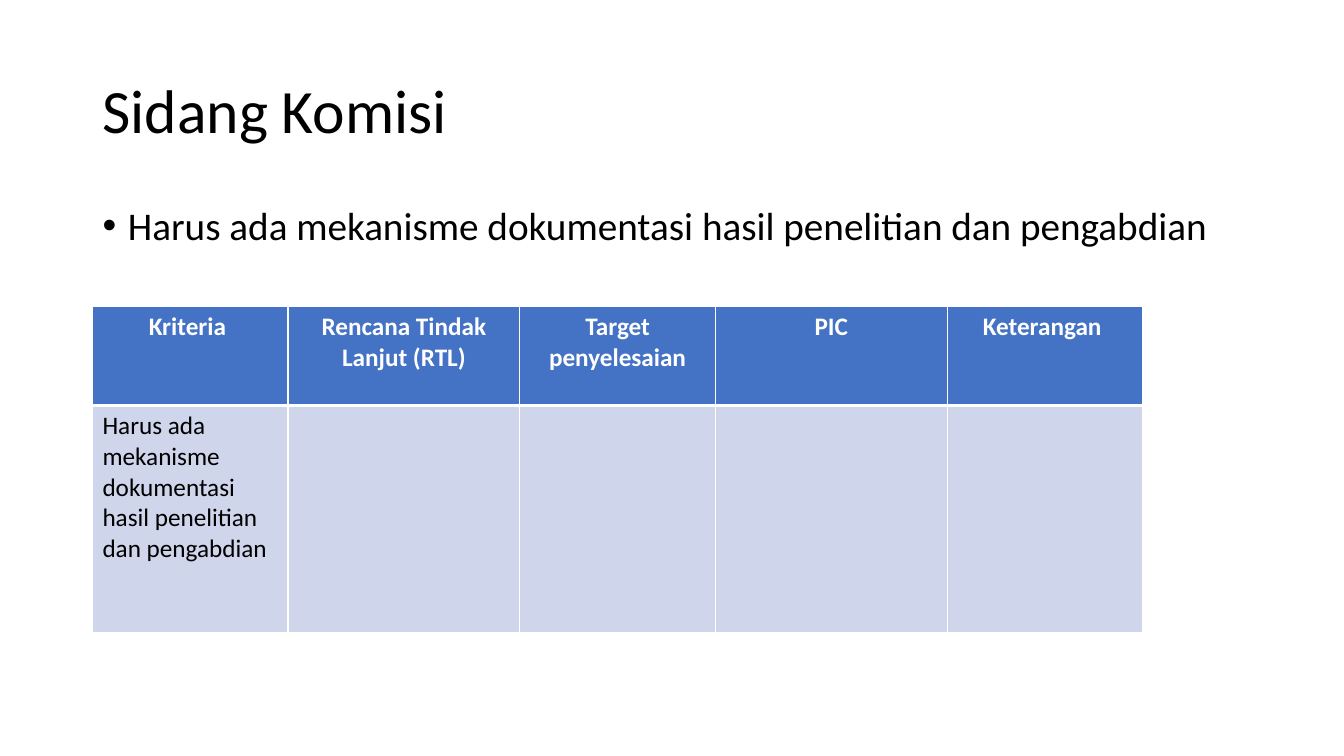
import pptx
import pptx.dml.color
import pptx.enum.text
import pptx.oxml
import pptx.oxml.ns
import pptx.util
from pptx.util import Cm

FONT = "Calibri"
BLACK, WHITE, BLUE, PALE = "000000", "FFFFFF", "4472C4", "CFD5EA"
LEFT, WIDTH = 2.33, 29.21
CRITERION = "Harus ada mekanisme dokumentasi hasil penelitian dan pengabdian"
HEADERS = ["Kriteria ", "Rencana Tindak Lanjut (RTL)", "Target penyelesaian",
           "PIC", "Keterangan "]
NARROW, WIDE = 4.93, 5.84
COLUMN_WIDTHS = [NARROW, WIDE, NARROW, WIDE, NARROW]
ROW_HEIGHTS = [2.49, 5.72]
ALIGN = pptx.enum.text.PP_ALIGN
ANCHOR = pptx.enum.text.MSO_ANCHOR


def rgb(value):
    """Return the colour for a hex string."""
    return pptx.dml.color.RGBColor.from_string(value)


def add_run(p, text, size, color, bold=False):
    """Add one formatted run to a paragraph."""
    r = p.add_run()
    r.text = text
    r.font.name = FONT
    r.font.size = pptx.util.Pt(size)
    r.font.bold = bold
    r.font.color.rgb = rgb(color)


def fill_placeholder(sp, top, height, text, size, anchor):
    """Place a placeholder, write its text and return the paragraph."""
    sp.left, sp.top, sp.width, sp.height = Cm(LEFT), Cm(top), Cm(WIDTH), Cm(height)
    tf = sp.text_frame
    tf.word_wrap = True
    tf.auto_size = pptx.enum.text.MSO_AUTO_SIZE.NONE
    tf.vertical_anchor = anchor
    p = tf.paragraphs[0]
    p.alignment = ALIGN.LEFT
    p.line_spacing = 0.9
    add_run(p, text, size, BLACK)
    return p


def set_bullet(p, indent):
    """Give a paragraph a round bullet with a hanging indent."""
    pPr = p._p.get_or_add_pPr()
    pPr.set("marL", str(indent))
    pPr.set("indent", str(-indent))
    ns = pptx.oxml.ns.nsdecls("a")
    pPr.append(pptx.oxml.parse_xml(f'<a:buFont {ns} typeface="Arial"/>'))
    pPr.append(pptx.oxml.parse_xml(f'<a:buChar {ns} char="•"/>'))


def set_borders(cell, top, bottom):
    """Draw white cell borders, 1 pt at the sides."""
    tcPr = cell._tc.get_or_add_tcPr()
    ns = pptx.oxml.ns.nsdecls("a")
    for side, width in (("L", 1), ("R", 1), ("T", top), ("B", bottom)):
        tcPr.append(pptx.oxml.parse_xml(
            f'<a:ln{side} {ns} w="{pptx.util.Pt(width)}"><a:solidFill>'
            f'<a:srgbClr val="{WHITE}"/></a:solidFill></a:ln{side}>'))


def add_plan_table(slide, top):
    """Add the follow-up table with a header row and one criterion."""
    rows = [HEADERS, [CRITERION] + [""] * (len(HEADERS) - 1)]
    table = slide.shapes.add_table(
        len(rows), len(HEADERS), Cm(LEFT), Cm(top),
        Cm(sum(COLUMN_WIDTHS)), Cm(sum(ROW_HEIGHTS))).table
    for column, width in zip(table.columns, COLUMN_WIDTHS):
        column.width = Cm(width)
    for i, texts in enumerate(rows):
        header = i == 0
        table.rows[i].height = Cm(ROW_HEIGHTS[i])
        for j, text in enumerate(texts):
            cell = table.cell(i, j)
            set_borders(cell, *((1, 3) if header else (3, 1)))
            cell.fill.solid()
            cell.fill.fore_color.rgb = rgb(BLUE if header else PALE)
            p = cell.text_frame.paragraphs[0]
            p.alignment = ALIGN.CENTER if header else ALIGN.LEFT
            if text:
                add_run(p, text, 18, WHITE if header else BLACK, header)


def main():
    """Build the slide and save it."""
    prs = pptx.Presentation()
    prs.slide_width, prs.slide_height = Cm(33.87), Cm(19.05)
    slide = prs.slides.add_slide(prs.slide_layouts[1])
    title, body = slide.placeholders
    fill_placeholder(title, 1.01, 3.68, "Sidang Komisi", 44, ANCHOR.MIDDLE)
    p = fill_placeholder(body, 5.07, 12.09, CRITERION, 28, ANCHOR.TOP)
    p.space_before = pptx.util.Pt(10)
    set_bullet(p, Cm(0.64))
    add_plan_table(slide, 7.73)
    prs.save("out.pptx")


if __name__ == "__main__":
    main()
